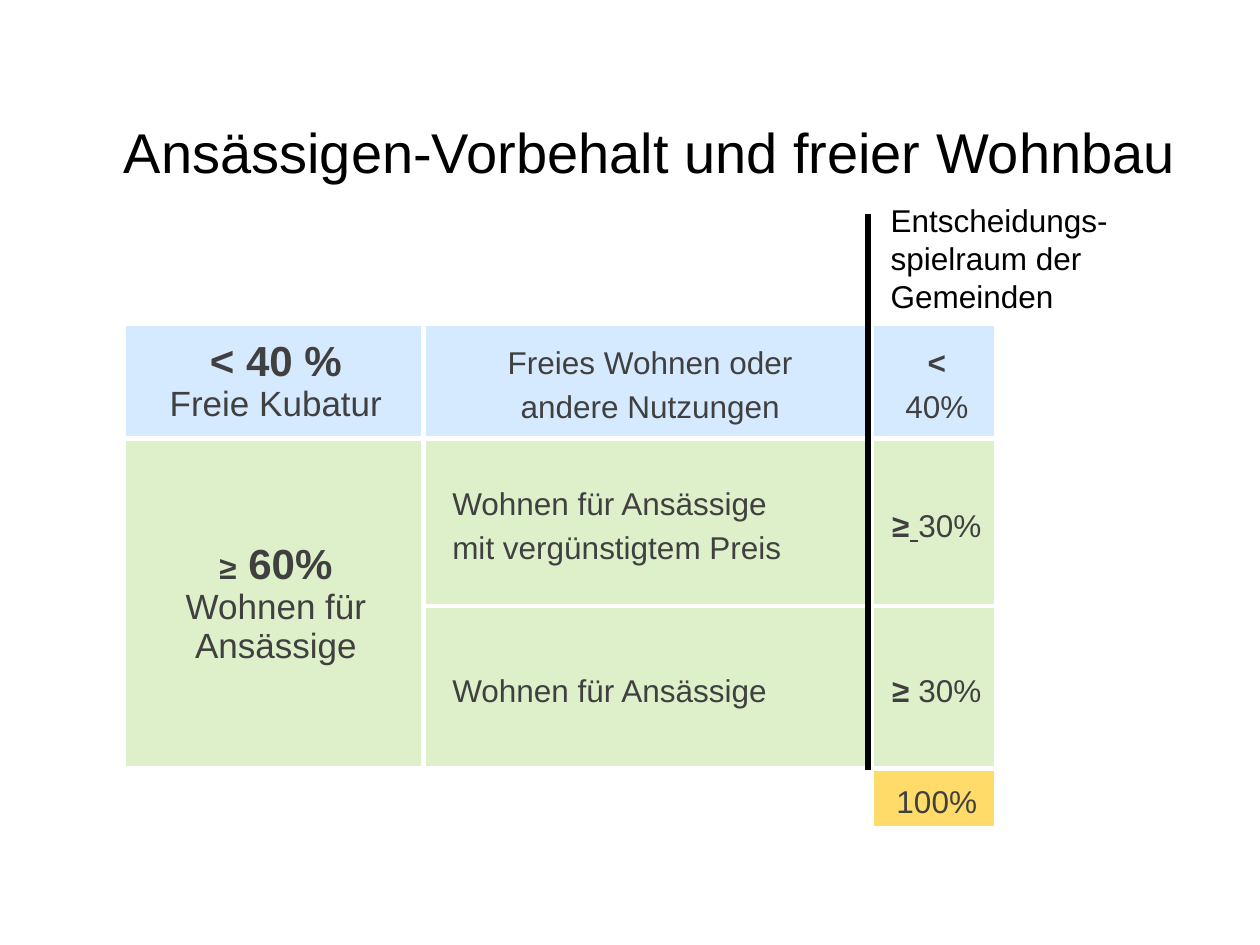
from lxml import etree
from pptx import Presentation
from pptx.dml.color import RGBColor
from pptx.enum.shapes import MSO_CONNECTOR
from pptx.enum.text import MSO_ANCHOR, PP_ALIGN
from pptx.oxml.ns import qn
from pptx.util import Inches, Pt

FONT = "Arial"
BLACK = RGBColor(0x00, 0x00, 0x00)
GREY = RGBColor(0x40, 0x40, 0x40)
WHITE = RGBColor(0xFF, 0xFF, 0xFF)
BLUE = RGBColor(0x99, 0xCC, 0xFF)
GREEN = RGBColor(0x92, 0xD0, 0x50)
YELLOW = RGBColor(0xFF, 0xDB, 0x69)

COLUMN_WIDTHS = [2.38, 3.56, 0.99]
ROW_HEIGHTS = [0.91, 1.33, 1.29, 0.45]

# Fill colour and opacity in percent
FREE = (BLUE, 40)
RESIDENT = (GREEN, 30)
TOTAL = (YELLOW, 100)
EMPTY = (WHITE, 20)


def style_run(run, size, color, bold=False):
    run.font.name = FONT
    run.font.size = Pt(size)
    run.font.color.rgb = color
    run.font.bold = bold


def add_text(slide, left, top, width, height, text, size):
    box = slide.shapes.add_textbox(
        Inches(left), Inches(top), Inches(width), Inches(height))
    box.text_frame.word_wrap = True
    paragraph = box.text_frame.paragraphs[0]
    paragraph.text = text
    style_run(paragraph.runs[0], size, BLACK)
    return box


def add_line(slide, x, top, bottom, width):
    line = slide.shapes.add_connector(
        MSO_CONNECTOR.STRAIGHT, Inches(x), Inches(top), Inches(x), Inches(bottom))
    line.line.color.rgb = BLACK
    line.line.width = Pt(width)
    etree.SubElement(line._element.spPr, qn("a:effectLst"))


def set_borders(cell, color, width):
    properties = cell._tc.get_or_add_tcPr()
    for index, side in enumerate(("lnL", "lnR", "lnT", "lnB")):
        border = etree.Element(qn(f"a:{side}"), w=str(Pt(width)))
        fill = etree.SubElement(border, qn("a:solidFill"))
        etree.SubElement(fill, qn("a:srgbClr"), val=str(color))
        properties.insert(index, border)


def set_fill(cell, color, opacity):
    cell.fill.solid()
    cell.fill.fore_color.rgb = color
    if opacity < 100:
        color_element = cell._tc.tcPr.find(qn("a:solidFill"))[0]
        etree.SubElement(color_element, qn("a:alpha"), val=str(opacity * 1000))


def fill_cell(cell, paragraphs, align=PP_ALIGN.CENTER, spacing=1.25, left=0.16):
    """Each paragraph is a list of (text, size, bold) runs."""
    cell.vertical_anchor = MSO_ANCHOR.MIDDLE
    cell.margin_left, cell.margin_right = Inches(left), Inches(0.12)
    cell.margin_top = cell.margin_bottom = Inches(0.05)
    frame = cell.text_frame
    for index, runs in enumerate(paragraphs):
        paragraph = frame.add_paragraph() if index else frame.paragraphs[0]
        paragraph.alignment = align
        paragraph.line_spacing = spacing
        for text, size, bold in runs:
            run = paragraph.add_run()
            run.text = text
            style_run(run, size, GREY, bold)


def add_table(slide):
    frame = slide.shapes.add_table(
        len(ROW_HEIGHTS), len(COLUMN_WIDTHS), Inches(0.98), Inches(2.57),
        Inches(sum(COLUMN_WIDTHS)), Inches(sum(ROW_HEIGHTS)))
    table = frame.table
    table.first_row = table.horz_banding = False
    for column, width in zip(table.columns, COLUMN_WIDTHS):
        column.width = Inches(width)
    for row, height in zip(table.rows, ROW_HEIGHTS):
        row.height = Inches(height)

    # Row colours; only the total is coloured in the last row
    fills = [[FREE] * 3, [RESIDENT] * 3, [RESIDENT] * 3, [EMPTY, EMPTY, TOTAL]]
    for row, row_fills in zip(table.rows, fills):
        for cell, (color, opacity) in zip(row.cells, row_fills):
            set_borders(cell, WHITE, 3)
            set_fill(cell, color, opacity)
    table.cell(1, 0).merge(table.cell(2, 0))

    # Main shares
    fill_cell(table.cell(0, 0), [[("< 40 %", 24, True)],
                                 [("Freie Kubatur", 20, False)]], spacing=1.0)
    fill_cell(table.cell(1, 0), [[("≥", 18, True), (" 60%", 24, True)],
                                 [("Wohnen für Ansässige", 20, False)]], spacing=1.0)

    # Uses
    fill_cell(table.cell(0, 1), [[("Freies Wohnen oder", 18, False)],
                                 [("andere Nutzungen", 18, False)]])
    uses = [["Wohnen für Ansässige", "mit vergünstigtem Preis"],
            ["Wohnen für Ansässige"]]
    for row, lines in enumerate(uses, start=1):
        fill_cell(table.cell(row, 1), [[(line, 18, False)] for line in lines],
                  align=PP_ALIGN.LEFT, left=0.23)

    # Percentages
    shares = [("< ", "40%"), ("≥", " ", "30%"), ("≥", " 30%"), ("100%",)]
    for row, parts in enumerate(shares):
        runs = [(part, 18, part in ("< ", "≥", " ")) for part in parts]
        fill_cell(table.cell(row, 2), [runs])
    table.cell(1, 2).text_frame.paragraphs[0].runs[1].font.underline = True


def main():
    presentation = Presentation()
    presentation.slide_width = Inches(10)
    presentation.slide_height = Inches(7.5)
    slide = presentation.slides.add_slide(presentation.slide_layouts[6])

    # Headings
    add_text(slide, 6.97, 1.55, 2.01, 1,
             "Entscheidungs-spielraum der Gemeinden", 18)
    title = add_text(slide, 0.83, 0.84, 8.66, 0.79,
                     "Ansässigen-Vorbehalt und freier Wohnbau", 32)
    title.text_frame.margin_top = Inches(0.09)
    title.text_frame.paragraphs[0].alignment = PP_ALIGN.CENTER

    # Table and divider for the municipalities' column
    add_table(slide)
    add_line(slide, 6.89, 1.7, 6.11, 3)

    presentation.save("out.pptx")


if __name__ == "__main__":
    main()
